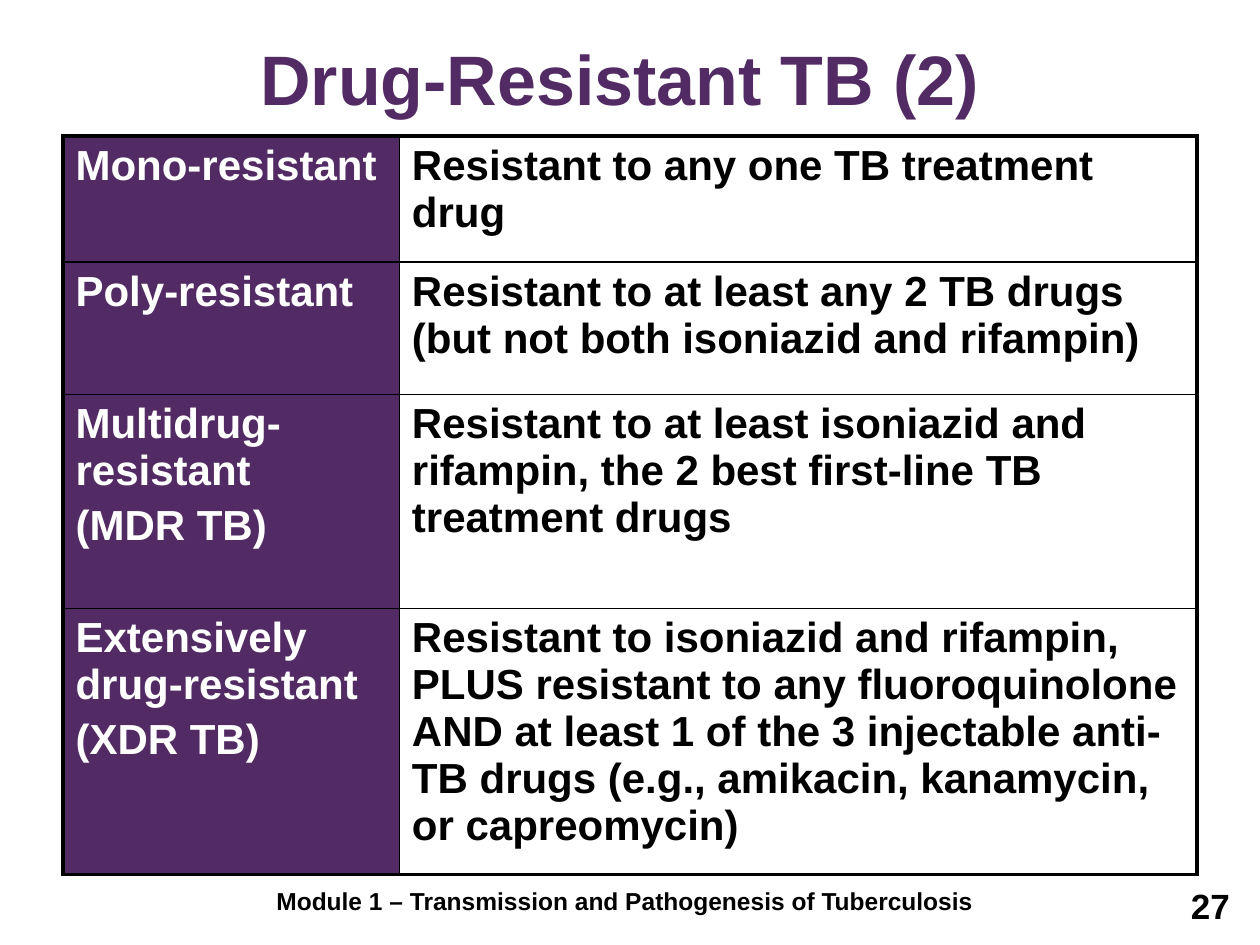
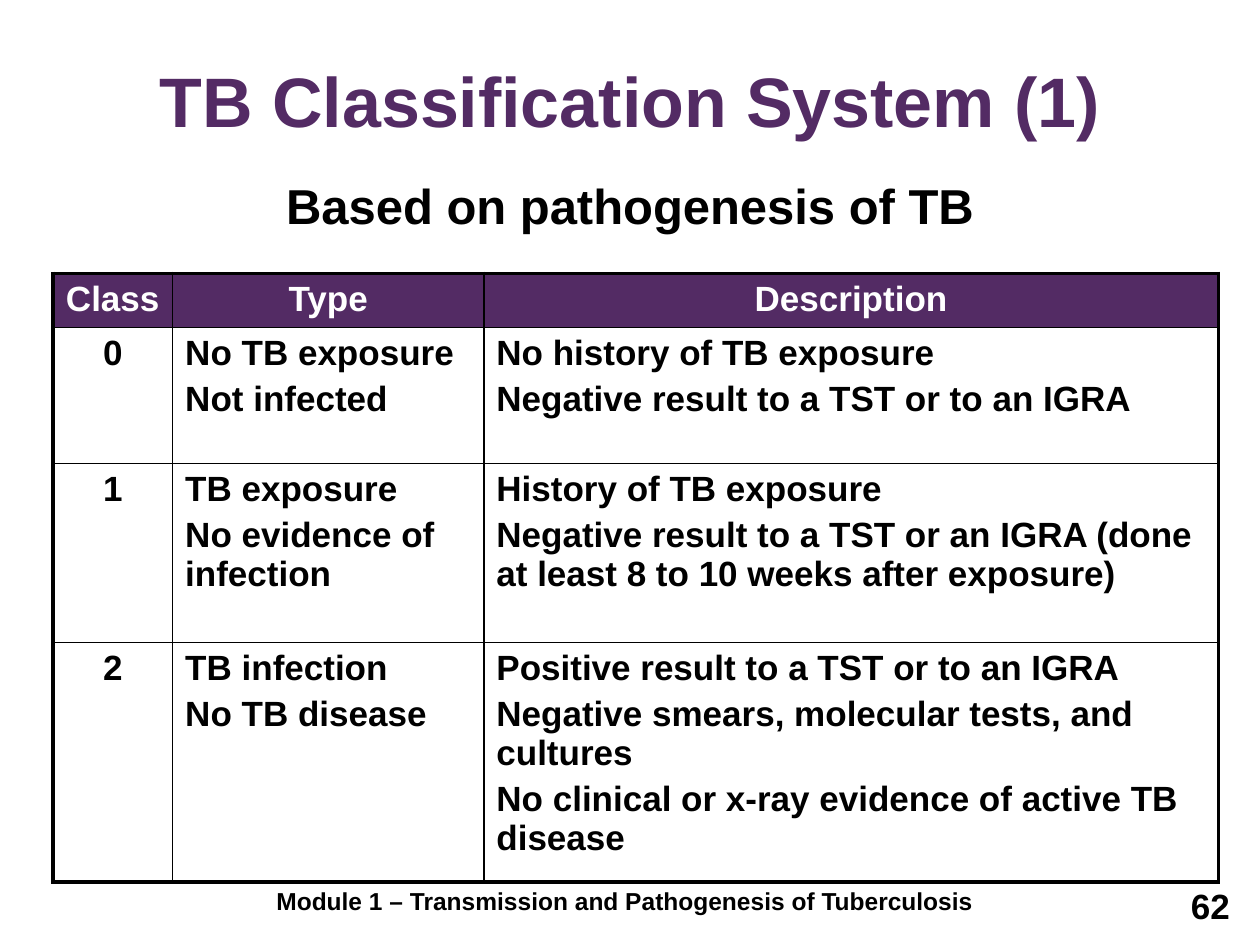
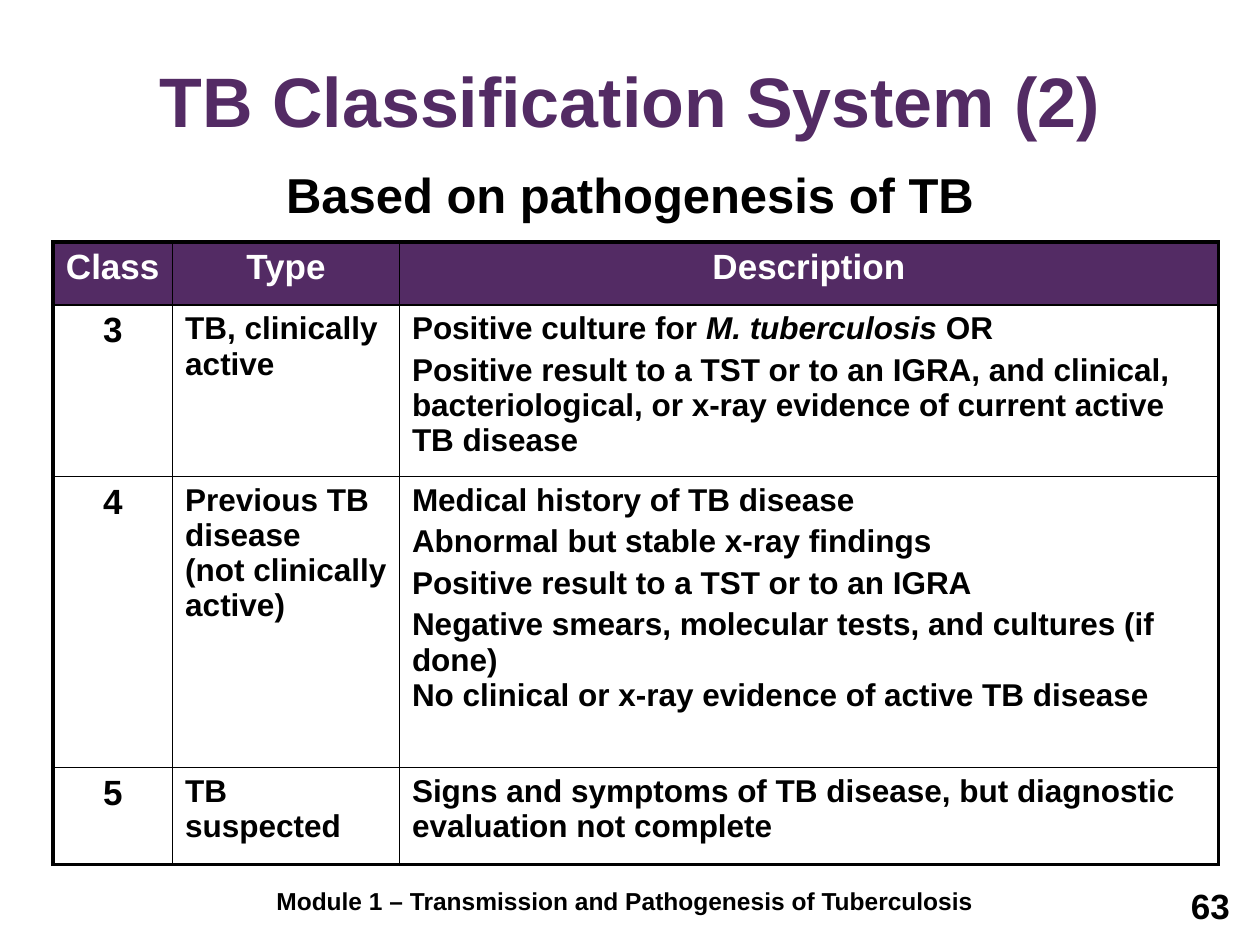
"""Build three slides on drug-resistant TB and the TB classification system."""
from dataclasses import dataclass

from lxml import etree
from pptx import Presentation
from pptx import util as u
from pptx.dml.color import RGBColor
from pptx.enum import text
from pptx.oxml.ns import qn

COLORS = {"purple": "532B64", "black": "000000", "white": "FFFFFF"}
FONT = "Arial"
FOOTER = "Module 1 – Transmission and Pathogenesis of Tuberculosis"
SUBTITLE = "Based on pathogenesis of TB"
OUTER_BORDER, INNER_BORDER = u.Pt(2.25), u.Pt(1)
LEFT, CENTER, RIGHT = text.PP_ALIGN.LEFT, text.PP_ALIGN.CENTER, text.PP_ALIGN.RIGHT

Box = tuple[float, float, float, float]
Cell = tuple[str, ...]


@dataclass(frozen=True)
class Grid:
    left: float
    top: float
    widths: tuple[float, ...]
    heights: tuple[float, ...]
    rows: tuple[tuple[Cell, ...], ...]
    body_size: int
    key_size: int
    header_row: bool = True

    def is_header(self, row: int, column: int) -> bool:
        return row == 0 if self.header_row else column == 0

    def is_key(self, row: int, column: int) -> bool:
        return self.header_row and (row == 0 or column == 0)


@dataclass(frozen=True)
class Page:
    number: int
    title: str
    title_box: Box
    grid: Grid
    subtitle_top: float | None = None


CLASS_HEADINGS = (("Class",), ("Type",), ("Description",))
CLASS_TITLE_BOX = (0.5, 0.25, 9, 0.92)

RESISTANCE = Grid(
    0.5, 1.08, (2.67, 6.33), (1, 1.05, 1.7, 2.11),
    (
        (("Mono-resistant",), ("Resistant to any one TB treatment drug",)),
        (("Poly-resistant",),
         ("Resistant to at least any 2 TB drugs (but not both isoniazid and rifampin)",)),
        (("Multidrug- resistant", "(MDR TB)"),
         ("Resistant to at least isoniazid and rifampin, the 2 best first-line TB "
          "treatment drugs",)),
        (("Extensively drug-resistant", "(XDR TB)"),
         ("Resistant to isoniazid and rifampin, PLUS resistant to any fluoroquinolone "
          "AND at least 1 of the 3 injectable anti-TB drugs (e.g., amikacin, kanamycin, "
          "or capreomycin)",)),
    ),
    body_size=24, key_size=24, header_row=False,
)

CLASSES_0_TO_2 = Grid(
    0.42, 2.17, (0.95, 2.47, 5.83), (0.43, 1.08, 1.42, 1.9),
    (
        CLASS_HEADINGS,
        (("0",), ("No TB exposure", "Not infected"),
         ("No history of TB exposure", "Negative result to a TST or to an IGRA")),
        (("1",), ("TB exposure", "No evidence of infection"),
         ("History of TB exposure",
          "Negative result to a TST or an IGRA (done at least 8 to 10 weeks after exposure)")),
        (("2",), ("TB infection", "No TB disease"),
         ("Positive result to a TST or to an IGRA",
          "Negative smears, molecular tests, and cultures",
          "No clinical or x-ray evidence of active TB disease")),
    ),
    body_size=20, key_size=20,
)

CLASSES_3_TO_5 = Grid(
    0.42, 1.92, (0.95, 1.8, 6.5), (0.5, 1.36, 2.31, 0.77),
    (
        CLASS_HEADINGS,
        (("3",), ("TB, clinically active",),
         ("Positive culture for *M. tuberculosis *OR",
          "Positive result to a TST or to an IGRA, and clinical, bacteriological, "
          "or x-ray evidence of current active TB disease")),
        (("4",), ("Previous TB disease\v(not clinically active)",),
         ("Medical history of TB disease",
          "Abnormal but stable x-ray findings",
          "Positive result to a TST or to an IGRA",
          "Negative smears, molecular tests, and cultures (if done)\v"
          "No clinical or x-ray evidence of active TB disease")),
        (("5",), ("TB suspected",),
         ("Signs and symptoms of TB disease, but diagnostic evaluation not complete",)),
    ),
    body_size=18, key_size=20,
)

PAGES = (
    Page(27, "Drug-Resistant TB (2)", (0.42, 0.25, 9, 0.75), RESISTANCE),
    Page(62, "TB Classification System (1)", CLASS_TITLE_BOX, CLASSES_0_TO_2, 1.34),
    Page(63, "TB Classification System (2)", CLASS_TITLE_BOX, CLASSES_3_TO_5, 1.26),
)


def style_paragraph(paragraph, size: int, color: str, align) -> None:
    paragraph.alignment = align
    font = paragraph.font
    font.name, font.size, font.bold = FONT, u.Pt(size), True
    font.color.rgb = RGBColor.from_string(COLORS[color])


def add_line(slide, box: Box, words: str, size: int, align) -> None:
    frame = slide.shapes.add_textbox(*map(u.Inches, box)).text_frame
    frame.word_wrap = True
    frame.text = words
    style_paragraph(frame.paragraphs[0], size, "black", align)


def set_title(slide, words: str, box: Box) -> None:
    title = slide.shapes.title
    title.left, title.top, title.width, title.height = map(u.Inches, box)
    frame = title.text_frame
    frame.text = words
    frame.auto_size = text.MSO_AUTO_SIZE.NONE
    frame.vertical_anchor = text.MSO_ANCHOR.BOTTOM
    style_paragraph(frame.paragraphs[0], 40, "purple", CENTER)


def set_borders(cell, outer_sides: dict[str, bool]) -> None:
    properties = cell._tc.get_or_add_tcPr()
    for side, is_outer in outer_sides.items():
        width = OUTER_BORDER if is_outer else INNER_BORDER
        border = etree.SubElement(properties, qn(f"a:ln{side}"), w=str(int(width)))
        fill = etree.SubElement(border, qn("a:solidFill"))
        etree.SubElement(fill, qn("a:srgbClr"), val=COLORS["black"])


def fill_cell(cell, content: Cell, size: int, color: str, align) -> None:
    frame = cell.text_frame
    for index, words in enumerate(content):
        paragraph = frame.add_paragraph() if index else frame.paragraphs[0]
        if index:
            paragraph.space_before = u.Pt(size * 0.2)
        style_paragraph(paragraph, size, color, align)
        if "*" not in words:
            paragraph.text = words
            continue
        for part, piece in enumerate(words.split("*")):
            run = paragraph.add_run()
            run.text = piece
            if part % 2:
                run.font.italic = True


def add_grid(slide, grid: Grid) -> None:
    last_row, last_column = len(grid.heights) - 1, len(grid.widths) - 1
    box = (grid.left, grid.top, sum(grid.widths), sum(grid.heights))
    table = slide.shapes.add_table(last_row + 1, last_column + 1, *map(u.Inches, box)).table
    table.first_row, table.first_col = grid.header_row, not grid.header_row
    table.horz_banding = False
    for column, width in zip(table.columns, grid.widths):
        column.width = u.Inches(width)
    for row, height in zip(table.rows, grid.heights):
        row.height = u.Inches(height)
    for r, contents in enumerate(grid.rows):
        for c, content in enumerate(contents):
            cell = table.cell(r, c)
            header, key = grid.is_header(r, c), grid.is_key(r, c)
            set_borders(cell, {"L": c == 0, "R": c == last_column,
                               "T": r == 0, "B": r == last_row})
            cell.fill.solid()
            cell.fill.fore_color.rgb = RGBColor.from_string(
                COLORS["purple" if header else "white"])
            fill_cell(cell, content, grid.key_size if key else grid.body_size,
                      "white" if header else "black", CENTER if key else LEFT)


def add_page(deck, page: Page) -> None:
    slide = deck.slides.add_slide(deck.slide_layouts.get_by_name("Title Only"))
    set_title(slide, page.title, page.title_box)
    add_grid(slide, page.grid)
    if page.subtitle_top is not None:
        add_line(slide, (0.25, page.subtitle_top, 9.5, 0.42), SUBTITLE, 28, CENTER)
    add_line(slide, (1.75, 6.98, 6.42, 0.52), FOOTER, 14, CENTER)
    add_line(slide, (7.53, 6.97, 2.33, 0.52), str(page.number), 20, RIGHT)


def main() -> None:
    deck = Presentation()
    deck.slide_width, deck.slide_height = u.Inches(10), u.Inches(7.5)
    for page in PAGES:
        add_page(deck, page)
    deck.save("out.pptx")


if __name__ == "__main__":
    main()
